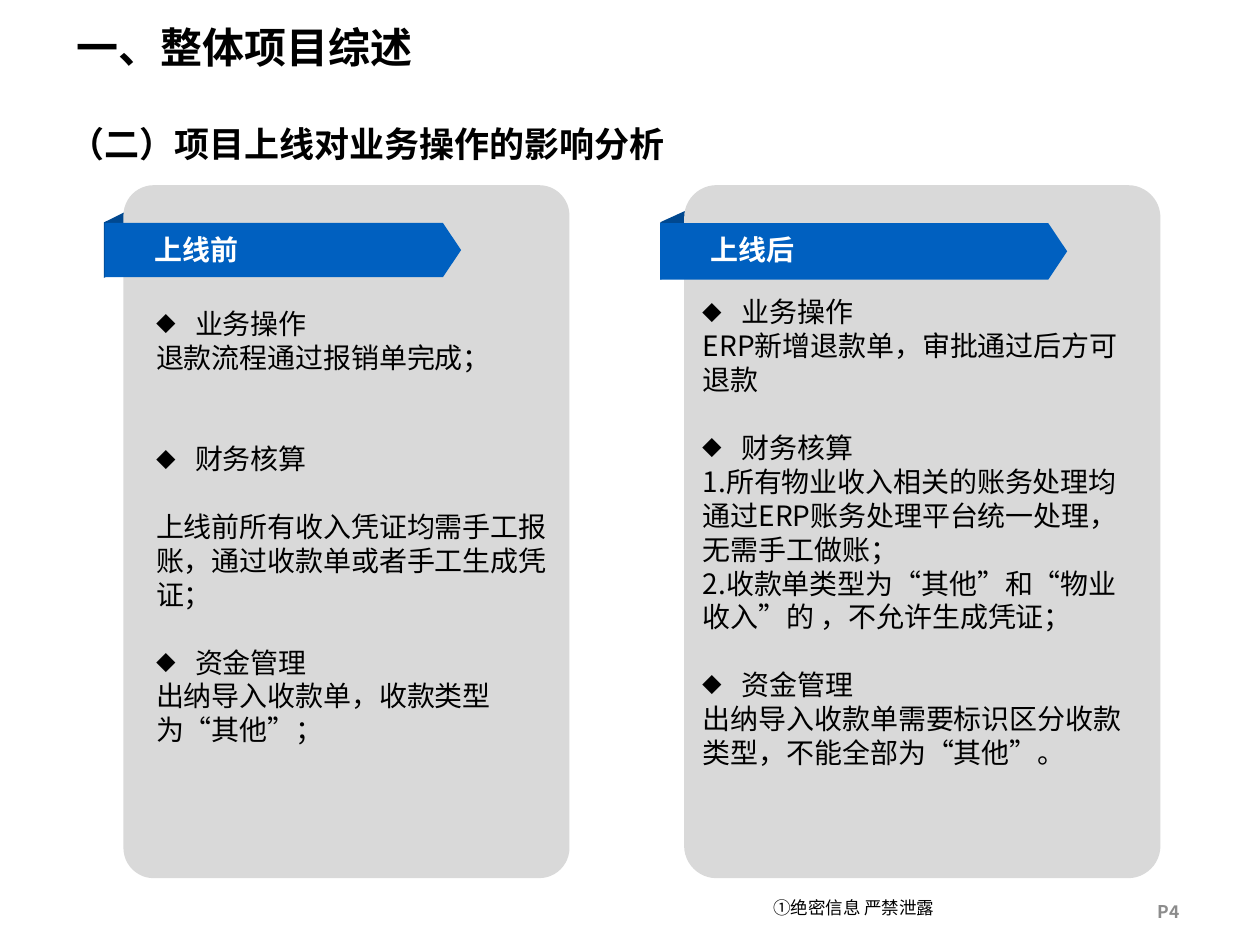
from lxml import etree
from pptx import Presentation
from pptx.dml.color import RGBColor
from pptx.enum import shapes, text
from pptx.oxml.ns import qn
from pptx.util import Inches, Pt

FONT = "Noto Sans CJK SC"
BLACK = RGBColor(0x00, 0x00, 0x00)
WHITE = RGBColor(0xFF, 0xFF, 0xFF)
GREY = RGBColor(0x8C, 0x8C, 0x8C)
PANEL = RGBColor(0xD9, 0xD9, 0xD9)
BLUE = RGBColor(0x00, 0x60, 0xC0)
DARK_BLUE = RGBColor(0x00, 0x48, 0x90)
LINE_RATIO = 1.21
BODY_SIZE = 16
INDENT = Inches(0.31)

# Each body line: (text, has a bullet, empty lines above)
BEFORE = [
    ("业务操作", True, 0),
    ("退款流程通过报销单完成；", False, 0),
    ("财务核算", True, 2),
    ("上线前所有收入凭证均需手工报账，通过收款单或者手工生成凭证；", False, 1),
    ("资金管理", True, 1),
    ("出纳导入收款单，收款类型为“其他”；", False, 0),
]
AFTER = [
    ("业务操作", True, 0),
    ("ERP新增退款单，审批通过后方可退款", False, 0),
    ("财务核算", True, 1),
    ("1.所有物业收入相关的账务处理均通过ERP账务处理平台统一处理，无需手工做账；", False, 0),
    ("2.收款单类型为“其他”和“物业收入”的 ，不允许生成凭证；", False, 0),
    ("资金管理", True, 1),
    ("出纳导入收款单需要标识区分收款类型，不能全部为“其他”。", False, 0),
]

# Frames: left, top, width, height
COLUMNS = [
    dict(heading="上线前", lines=BEFORE, fold=(0.66, 1.82, 0.55, 0.22),
         panel=(0.98, 1.47, 3.54, 5.5), ribbon=(0.83, 1.77, 2.83, 0.43),
         label=(1.23, 1.84, 1.86, 0.27), body=(1.14, 2.38, 3.38, 3.6)),
    dict(heading="上线后", lines=AFTER, fold=(5.08, 1.81, 0.57, 0.25),
         panel=(5.43, 1.47, 3.78, 5.5), ribbon=(5.24, 1.77, 3.23, 0.45),
         label=(5.64, 1.84, 2.12, 0.54), body=(5.48, 2.29, 3.69, 3.87)),
]


def add_block(page, kind, frame, color, adjust=None):
    block = page.shapes.add_shape(kind, *map(Inches, frame))
    block.shadow.inherit = False
    block.fill.solid()
    block.fill.fore_color.rgb = color
    block.line.fill.background()
    if adjust is not None:
        block.adjustments[0] = adjust
    return block


def add_frame(page, frame, **formats):
    box = page.shapes.add_textbox(*map(Inches, frame))
    for name, value in {"word_wrap": True, **formats}.items():
        setattr(box.text_frame, name, value)
    return box.text_frame


def add_bullet(para):
    properties = para._p.get_or_add_pPr()
    properties.set("marL", str(INDENT))
    properties.set("indent", str(-INDENT))
    etree.SubElement(properties, qn("a:buSzPct")).set("val", "70000")
    etree.SubElement(properties, qn("a:buFont")).set("typeface", FONT)
    etree.SubElement(properties, qn("a:buChar")).set("char", "◆")


def write(para, words, size, color=BLACK, bold=False):
    para.line_spacing = Pt(size * LINE_RATIO)
    span = para.add_run()
    span.text = words
    span.font.color.rgb = color
    for name, value in {"name": FONT, "size": Pt(size), "bold": bold}.items():
        setattr(span.font, name, value)
    east_asian = etree.SubElement(span.font._element, qn("a:ea"))
    east_asian.set("typeface", FONT)


def add_label(page, frame, words, size, color=BLACK, bold=False, **formats):
    write(add_frame(page, frame, **formats).paragraphs[0], words, size, color, bold)


def add_body(page, frame, lines):
    holder = add_frame(page, frame)
    for index, (words, bulleted, gap) in enumerate(lines):
        para = holder.add_paragraph() if index else holder.paragraphs[0]
        if bulleted:
            add_bullet(para)
        if gap:
            para.space_before = Pt(gap * BODY_SIZE * LINE_RATIO)
        write(para, words, BODY_SIZE)


def add_column(page, column):
    kinds = shapes.MSO_SHAPE
    # Folded end behind the panel
    fold = add_block(page, kinds.FLOWCHART_DATA, column["fold"], DARK_BLUE)
    fold.rotation = 270
    fold._element.spPr.xfrm.set("flipH", "1")
    # Panel and ribbon
    add_block(page, kinds.ROUNDED_RECTANGLE, column["panel"], PANEL, 0.068)
    add_block(page, kinds.PENTAGON, column["ribbon"], BLUE, 0.335)
    # Heading and body
    add_label(page, column["label"], column["heading"], 16, WHITE, True,
              margin_left=0, margin_top=0, margin_right=0, margin_bottom=0)
    add_body(page, column["body"], column["lines"])


def main():
    deck = Presentation()
    deck.slide_width, deck.slide_height = Inches(10), Inches(7.5)
    page = deck.slides.add_slide(deck.slide_layouts[6])

    # Footer
    add_label(page, (6.04, 7.07, 1.53, 0.27), "①绝密信息 严禁泄露", 10, word_wrap=False)
    add_label(page, (9.09, 7.1, 0.91, 0.27), "P4", 10, GREY, True)

    # Titles
    add_label(page, (0.51, -0.01, 7.77, 0.76), "一、整体项目综述", 24, bold=True,
              vertical_anchor=text.MSO_ANCHOR.MIDDLE)
    add_label(page, (0.45, 0.92, 5, 0.44), "（二）项目上线对业务操作的影响分析", 20,
              bold=True, word_wrap=False)

    # Comparison columns
    for column in COLUMNS:
        add_column(page, column)

    deck.save("out.pptx")


if __name__ == "__main__":
    main()
